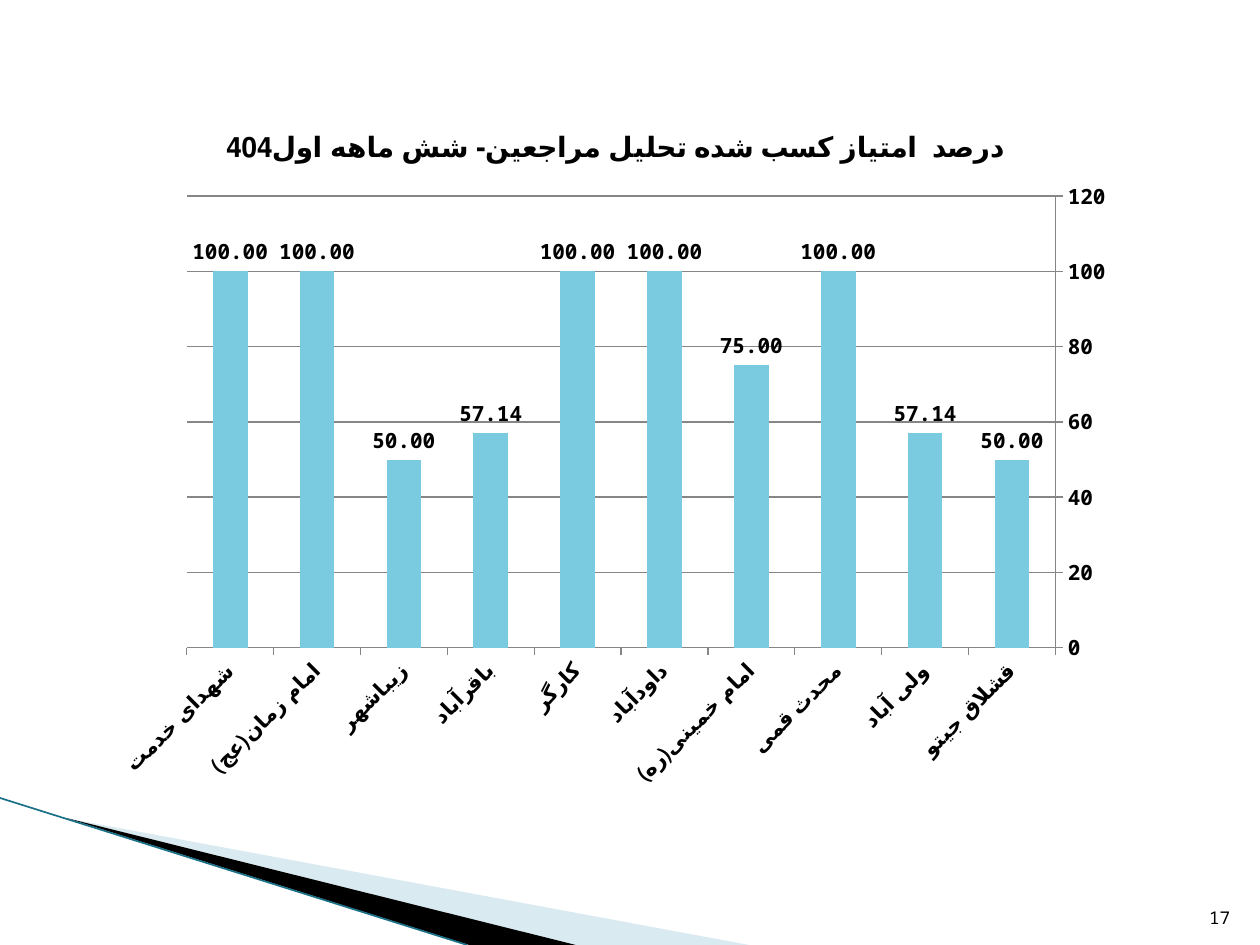
import pptx
import pptx.chart.data
import pptx.dml.color
import pptx.enum.chart
import pptx.enum.shapes
import pptx.enum.text
import pptx.oxml.ns
import pptx.oxml.xmlchemy
import pptx.util

Pt = pptx.util.Pt
FONT = "Noto Sans Mono"
BLACK, GRID, BAR = "000000", "868686", "7ACBE0"
PALE, TEAL = "A0CBDC", "1A7086"

SCORES = [
    ("قشلاق جیتو", 50), ("ولی آباد", 57.14), ("محدث قمی", 100),
    ("امام خمینی(ره)", 75), ("داودآباد", 100), ("کارگر", 100),
    ("باقرآباد", 57.14), ("زیباشهر", 50), ("امام زمان(عج)", 100),
    ("شهدای خدمت", 100),
]


def color(value):
    return pptx.dml.color.RGBColor.from_string(value)


def add_element(parent, tag, **attributes):
    element = pptx.oxml.xmlchemy.OxmlElement(tag)
    for name, value in attributes.items():
        element.set(name, str(value))
    parent.append(element)
    return element


class SlideBuilder:
    def __init__(self, slide):
        self.slide = slide
        self.shapes = slide.shapes

    def style_font(self, font, size, bold=False):
        font.name, font.size, font.bold = FONT, Pt(size), bold
        font.color.rgb = color(BLACK)

    def polygon(self, points, fill, opacity=None):
        corners = [(Pt(x), Pt(y)) for x, y in points]
        builder = self.shapes.build_freeform(*corners[0])
        builder.add_line_segments(corners[1:], close=True)
        shape = builder.convert_to_shape()
        shape.shadow.inherit = False
        shape.fill.solid()
        shape.fill.fore_color.rgb = color(fill)
        shape.line.fill.background()
        if opacity is not None:
            solid = shape._element.spPr.find(pptx.oxml.ns.qn("a:solidFill"))
            add_element(solid[0], "a:alpha", val=opacity * 1000)

    def line(self, start, end, stroke, width):
        connector = self.shapes.add_connector(
            pptx.enum.shapes.MSO_CONNECTOR.STRAIGHT,
            *[Pt(length) for length in start + end])
        connector.line.color.rgb = color(stroke)
        connector.line.width = Pt(width)
        add_element(connector._element.spPr, "a:effectLst")

    def text(self, content, left, top, width, height, size):
        box = self.shapes.add_textbox(Pt(left), Pt(top), Pt(width), Pt(height))
        frame = box.text_frame
        frame.word_wrap = True
        frame.vertical_anchor = pptx.enum.text.MSO_ANCHOR.BOTTOM
        paragraph = frame.paragraphs[0]
        paragraph.alignment = pptx.enum.text.PP_ALIGN.RIGHT
        run = paragraph.add_run()
        run.text = content
        self.style_font(run.font, size)

    def style_axis(self, axis, number_format=None):
        axis.major_tick_mark = pptx.enum.chart.XL_TICK_MARK.OUTSIDE
        axis.minor_tick_mark = pptx.enum.chart.XL_TICK_MARK.NONE
        axis.format.line.color.rgb = color(GRID)
        axis.format.line.width = Pt(0.75)
        self.style_font(axis.tick_labels.font, 12, True)
        if number_format:
            axis.tick_labels.number_format = number_format
            axis.tick_labels.number_format_is_linked = False

    def place_plot(self, chart, **fractions):
        plot_area = chart._chartSpace.chart.plotArea
        for old in plot_area.findall(pptx.oxml.ns.qn("c:layout")):
            plot_area.remove(old)
        layout = pptx.oxml.xmlchemy.OxmlElement("c:layout")
        plot_area.insert(0, layout)
        manual = add_element(layout, "c:manualLayout")
        add_element(manual, "c:layoutTarget", val="inner")
        for mode in ("xMode", "yMode"):
            add_element(manual, "c:" + mode, val="edge")
        for name, value in fractions.items():
            add_element(manual, "c:" + name, val=value)

    def column_chart(self, title, scores, left, top, width, height):
        data = pptx.chart.data.CategoryChartData(number_format="0.00")
        data.categories = [name for name, score in scores]
        data.add_series("Series 1", [score for name, score in scores])
        chart = self.shapes.add_chart(
            pptx.enum.chart.XL_CHART_TYPE.COLUMN_CLUSTERED,
            Pt(left), Pt(top), Pt(width), Pt(height), data).chart
        self.style_font(chart.font, 18)
        chart.has_legend = False

        # Chart title
        chart.has_title = True
        run = chart.chart_title.text_frame.paragraphs[0].add_run()
        run.text = title
        self.style_font(run.font, 16, True)

        # Axes, with categories running from right to left
        self.style_axis(chart.category_axis)
        chart.category_axis.reverse_order = True
        body = chart.category_axis._element.find(
            pptx.oxml.ns.qn("c:txPr")).find(pptx.oxml.ns.qn("a:bodyPr"))
        body.set("rot", str(-45 * 60000))
        value_axis = chart.value_axis
        self.style_axis(value_axis, "0")
        value_axis.minimum_scale, value_axis.maximum_scale = 0, 120
        value_axis.major_unit = 20
        value_axis.has_major_gridlines = True
        value_axis.major_gridlines.format.line.color.rgb = color(GRID)
        value_axis.major_gridlines.format.line.width = Pt(0.75)

        # Columns and their labels
        plot = chart.plots[0]
        plot.gap_width = 150
        plot.vary_by_categories = False
        series = plot.series[0]
        series.format.fill.solid()
        series.format.fill.fore_color.rgb = color(BAR)
        labels = series.data_labels
        labels.show_value = True
        labels.number_format = "0.00"
        labels.number_format_is_linked = False
        labels.position = pptx.enum.chart.XL_LABEL_POSITION.OUTSIDE_END
        self.style_font(labels.font, 12, True)
        self.place_plot(chart, x=0.08, y=0.13, w=0.85, h=0.65)


def main():
    presentation = pptx.Presentation()
    presentation.slide_width, presentation.slide_height = Pt(720), Pt(540)
    slide = presentation.slides.add_slide(presentation.slide_layouts[6])
    builder = SlideBuilder(slide)

    # Decorative wedges in the bottom corner
    builder.polygon([(40, 468), (428, 540), (328, 540)], PALE, opacity=40)
    builder.polygon([(38, 467.5), (329, 540), (268, 540)], BLACK)
    builder.line((0, 456), (267, 540), TEAL, 0.95)

    # Slide number
    builder.text("17", 681, 505, 29, 29, 10)

    # Scores by centre
    builder.column_chart(
        "درصد  امتیاز کسب شده تحلیل مراجعین- شش ماهه اول404",
        SCORES, 60, 60.5, 584, 397)

    presentation.save("out.pptx")


if __name__ == "__main__":
    main()
